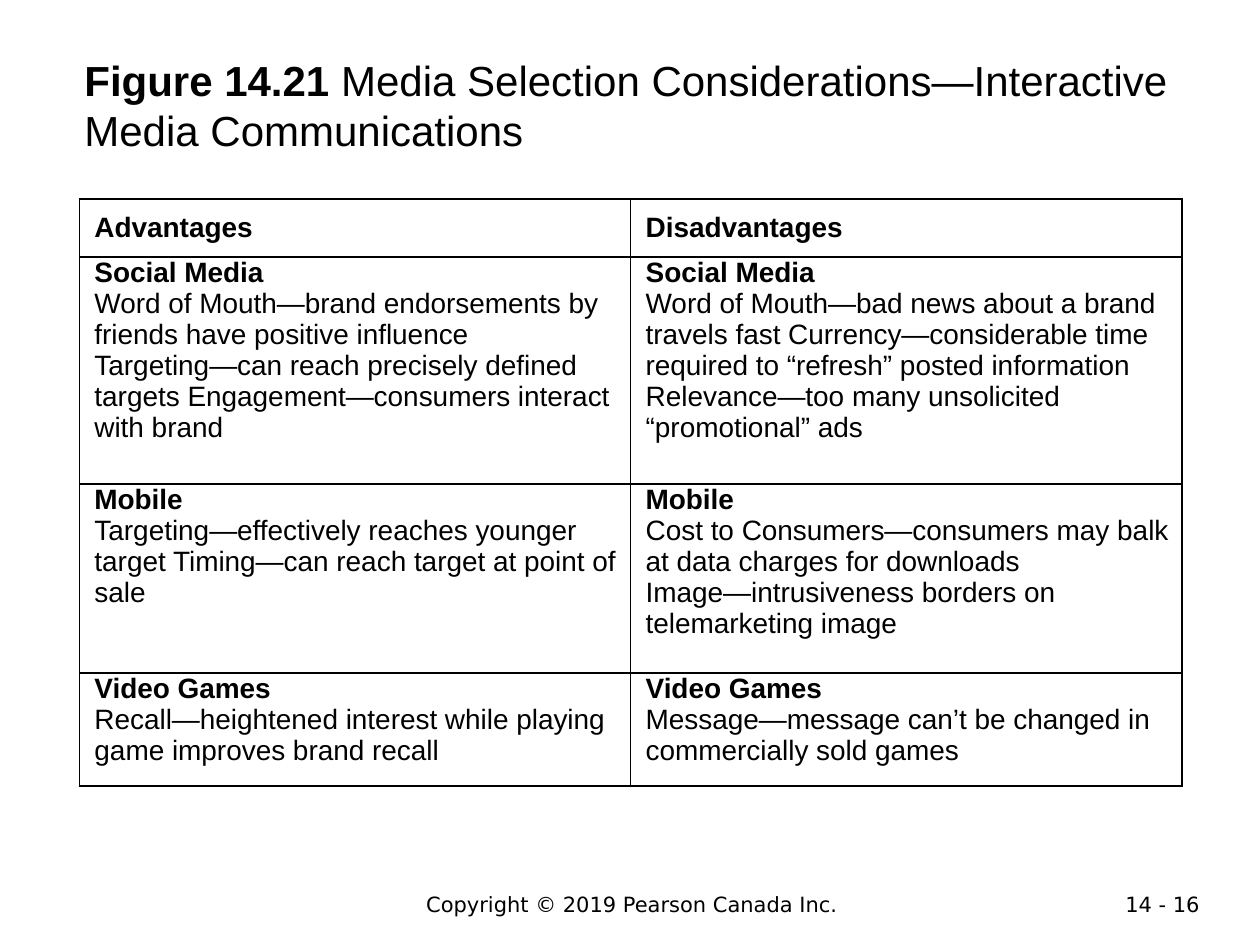
from lxml import etree
from pptx import Presentation
from pptx import util as u
from pptx.dml.color import RGBColor
from pptx.enum import text
from pptx.oxml.ns import qn

COLORS = {"ink": "000000", "paper": "FFFFFF"}
TITLE = {"name": "Arial", "size": u.Pt(24)}
BODY = {"name": "Arial", "size": u.Pt(16)}
FOOTER = {"name": "DejaVu Sans", "size": u.Pt(12)}

prs = Presentation()
prs.slide_width, prs.slide_height = u.Inches(10), u.Inches(7.5)
W, H = prs.slide_width, prs.slide_height
s = prs.slides.add_slide(prs.slide_layouts[6])


def add_run(p, words, style, bold=False):
    r = p.add_run()
    r.text = words
    for key, value in {**style, "bold": bold}.items():
        setattr(r.font, key, value)
    r.font.color.rgb = RGBColor.from_string(COLORS["ink"])


def add_box(left, top, width, height, **frame):
    sp = s.shapes.add_textbox(int(W * left), int(H * top), int(W * width), int(H * height))
    for key, value in {"word_wrap": True, **frame}.items():
        setattr(sp.text_frame, key, value)
    return sp.text_frame.paragraphs[0]


# Title
sides = ("left", "top", "right", "bottom")
p = add_box(0.067, 0.056, 0.9, 0.11, vertical_anchor=text.MSO_ANCHOR.MIDDLE,
            **{f"margin_{side}": 0 for side in sides})
add_run(p, "Figure 14.21", TITLE, bold=True)
add_run(p, " Media Selection Considerations—Interactive Media Communications", TITLE)

# Table: header row, then one row per medium
rows = [
    (0.46, ["Advantages"], ["Disadvantages"]),
    (1.8,
     ["Social Media",
      "Word of Mouth—brand endorsements by friends have positive influence",
      "Targeting—can reach precisely defined targets Engagement—consumers interact with brand"],
     ["Social Media",
      "Word of Mouth—bad news about a brand travels fast Currency—considerable time "
      "required to “refresh” posted information",
      "Relevance—too many unsolicited “promotional” ads"]),
    (1.5,
     ["Mobile",
      "Targeting—effectively reaches younger target Timing—can reach target at point of sale"],
     ["Mobile",
      "Cost to Consumers—consumers may balk at data charges for downloads",
      "Image—intrusiveness borders on telemarketing image"]),
    (0.9,
     ["Video Games",
      "Recall—heightened interest while playing game improves brand recall"],
     ["Video Games",
      "Message—message can’t be changed in commercially sold games"]),
]
height = u.Inches(sum(row[0] for row in rows))
table = s.shapes.add_table(len(rows), 2, u.Inches(0.63), u.Inches(1.58),
                           int(W * 0.875), height).table
table.first_row = table.horz_banding = False

for i, (row_height, *cells) in enumerate(rows):
    table.rows[i].height = u.Inches(row_height)
    for j, lines in enumerate(cells):
        cell = table.cell(i, j)
        anchor = text.MSO_ANCHOR.TOP if i else text.MSO_ANCHOR.MIDDLE
        layout = {"margin_left": u.Inches(0.12), "margin_right": u.Inches(0.03),
                  "margin_top": 0, "margin_bottom": 0, "vertical_anchor": anchor}
        for key, value in layout.items():
            setattr(cell, key, value)

        # Cell borders come before the fill in the cell properties
        tc_pr = cell._tc.get_or_add_tcPr()
        for edge in ("a:lnL", "a:lnR", "a:lnT", "a:lnB"):
            ln = etree.SubElement(tc_pr, qn(edge), w=str(u.Pt(1)))
            fill = etree.SubElement(ln, qn("a:solidFill"))
            etree.SubElement(fill, qn("a:srgbClr"), val=COLORS["ink"])
        cell.fill.solid()
        cell.fill.fore_color.rgb = RGBColor.from_string(COLORS["paper"])

        # The first line of every cell is its bold heading
        tf = cell.text_frame
        for n, line in enumerate(lines):
            p = tf.add_paragraph() if n else tf.paragraphs[0]
            add_run(p, line, BODY, bold=n == 0)

# Footer and page number
p = add_box(0.164, 0.937, 0.675, 0.04)
p.alignment = text.PP_ALIGN.CENTER
add_run(p, "Copyright © 2019 Pearson Canada Inc.", FOOTER)
p = add_box(0.862, 0.937, 0.1, 0.03)
p.alignment = text.PP_ALIGN.RIGHT
add_run(p, "14 - 16", FOOTER)

prs.save("out.pptx")
